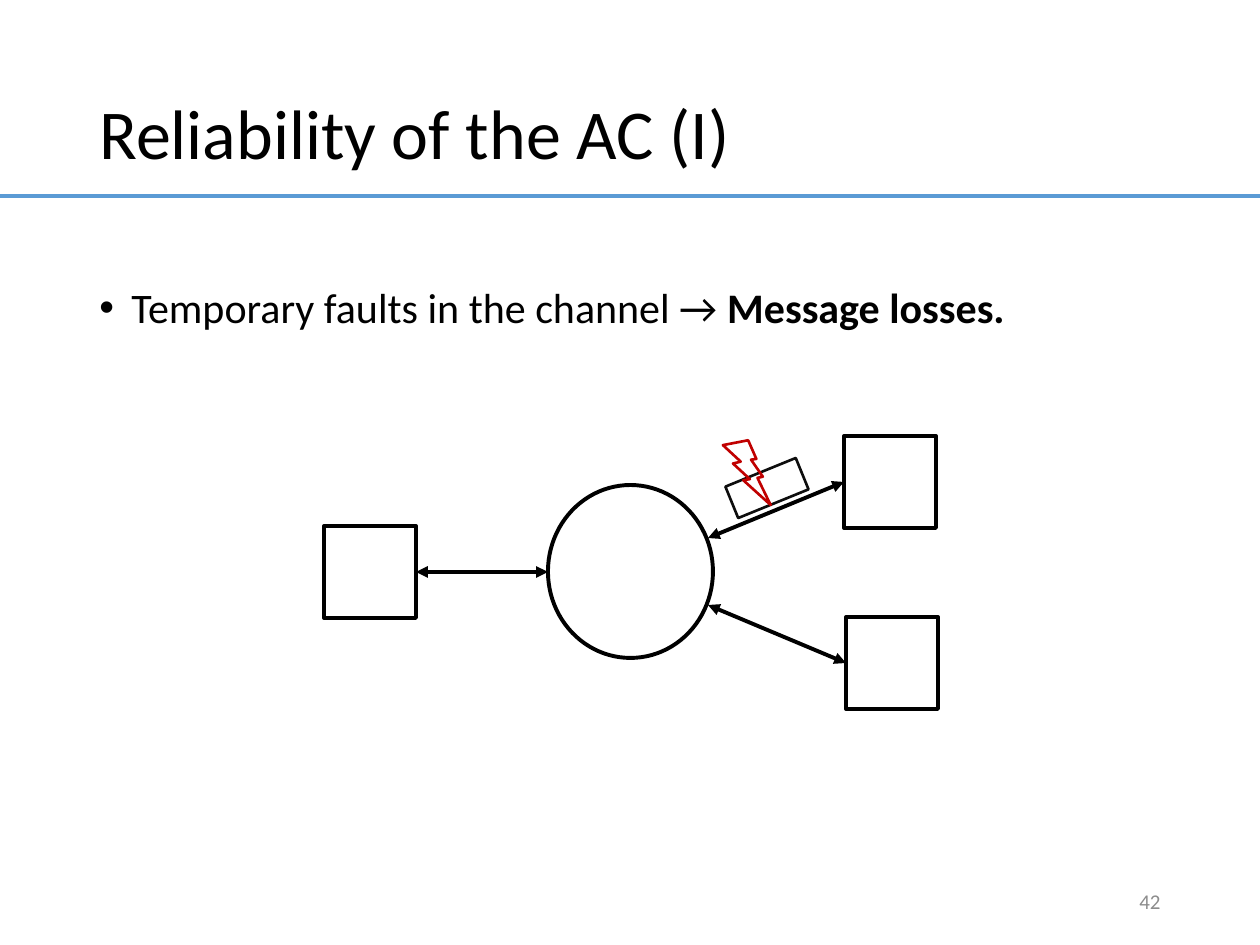
from lxml import etree
from pptx import Presentation
from pptx.dml.color import RGBColor
from pptx.enum.shapes import MSO_CONNECTOR, MSO_SHAPE
from pptx.enum.text import MSO_ANCHOR, PP_ALIGN
from pptx.oxml.ns import qn
from pptx.util import Emu, Pt

STRAIGHT = MSO_CONNECTOR.STRAIGHT
RECTANGLE = MSO_SHAPE.RECTANGLE
OVAL = MSO_SHAPE.OVAL
BOLT = MSO_SHAPE.LIGHTNING_BOLT
TOP, MIDDLE = MSO_ANCHOR.TOP, MSO_ANCHOR.MIDDLE
LEFT, RIGHT = PP_ALIGN.LEFT, PP_ALIGN.RIGHT
LEFT_SIDE, RIGHT_SIDE = 1, 3

BLACK = RGBColor(0x00, 0x00, 0x00)
NEAR_BLACK = RGBColor(0x0D, 0x0D, 0x0D)
BLUE = RGBColor(0x5B, 0x9B, 0xD5)
RED = RGBColor(0xC0, 0x00, 0x00)
GRAY = RGBColor(0x8C, 0x8C, 0x8C)

PX_PER_INCH = 126
NODE_SIZE = 92


def px(length):
    return Emu(round(length * 914400 / PX_PER_INCH))


def write(para, text, size=24, color=BLACK, bold=False):
    span = para.add_run()
    span.text = text
    span.font.name = "Calibri"
    span.font.size = Pt(size)
    span.font.color.rgb = color
    span.font.bold = bold


class Sketch:
    def __init__(self, page):
        self.page = page

    def text(self, x, y, width, height, spans, anchor=TOP, align=LEFT,
             spacing=1.0, bullet_indent=0, **style):
        box = self.page.shapes.add_textbox(px(x), px(y), px(width), px(height))
        frame = box.text_frame
        frame.word_wrap = True
        frame.vertical_anchor = anchor
        para = frame.paragraphs[0]
        para.alignment = align
        para.line_spacing = spacing
        if bullet_indent:
            properties = para._p.get_or_add_pPr()
            properties.set("marL", str(px(bullet_indent)))
            properties.set("indent", str(-px(bullet_indent)))
            font = etree.SubElement(properties, qn("a:buFont"))
            font.set("typeface", "Arial")
            etree.SubElement(properties, qn("a:buChar")).set("char", "•")
        for text, bold in spans:
            write(para, text, bold=bold, **style)

    def outline(self, kind, x, y, width, height, color=BLACK, weight=2.25, rotation=0):
        shape = self.page.shapes.add_shape(kind, px(x), px(y), px(width), px(height))
        shape.shadow.inherit = False
        shape.fill.background()
        shape.line.color.rgb = color
        shape.line.width = Pt(weight)
        shape.rotation = rotation
        return shape

    def node(self, x, y):
        return self.outline(RECTANGLE, x, y, NODE_SIZE, NODE_SIZE)

    def line(self, start, end, color=BLACK):
        line = self.page.shapes.add_connector(STRAIGHT, *map(px, start + end))
        line.line.color.rgb = color
        line.line.width = Pt(2.25)
        etree.SubElement(line._element.spPr, qn("a:effectLst"))
        return line

    def link(self, start, node, side):
        arrow = self.line(start, start)
        arrow.end_connect(node, side)
        stroke = arrow.line._get_or_add_ln()
        for tag in ("a:headEnd", "a:tailEnd"):
            etree.SubElement(stroke, qn(tag)).set("type", "triangle")


def main():
    deck = Presentation()
    deck.slide_width, deck.slide_height = px(1260), px(945)
    sketch = Sketch(deck.slides.add_slide(deck.slide_layouts[6]))

    sketch.line((0, 196), (1260, 196), BLUE)
    sketch.text(87, 42, 1086, 190, [("Reliability of the AC (I)", False)],
                anchor=MIDDLE, spacing=0.9, size=40)
    sketch.text(87, 281, 1086, 68,
                [("Temporary faults in the channel → ", False), ("Message losses.", True)],
                spacing=0.9, bullet_indent=32)

    sketch.outline(OVAL, 548, 485, 165, 173)
    sender = sketch.node(324, 526)
    upper_receiver = sketch.node(844, 436)
    lower_receiver = sketch.node(846, 617)
    sketch.link((548, 572), sender, RIGHT_SIDE)
    sketch.link((708, 538), upper_receiver, LEFT_SIDE)
    sketch.link((708, 605), lower_receiver, LEFT_SIDE)

    sketch.outline(RECTANGLE, 729, 471, 76, 34, NEAR_BLACK, 1.5, rotation=337.8)
    sketch.outline(BOLT, 718, 441, 60, 58, RED, 1.5, rotation=13)

    sketch.text(890, 876, 283, 50, [("42", False)],
                anchor=MIDDLE, align=RIGHT, size=12, color=GRAY)
    deck.save("out.pptx")


if __name__ == "__main__":
    main()
